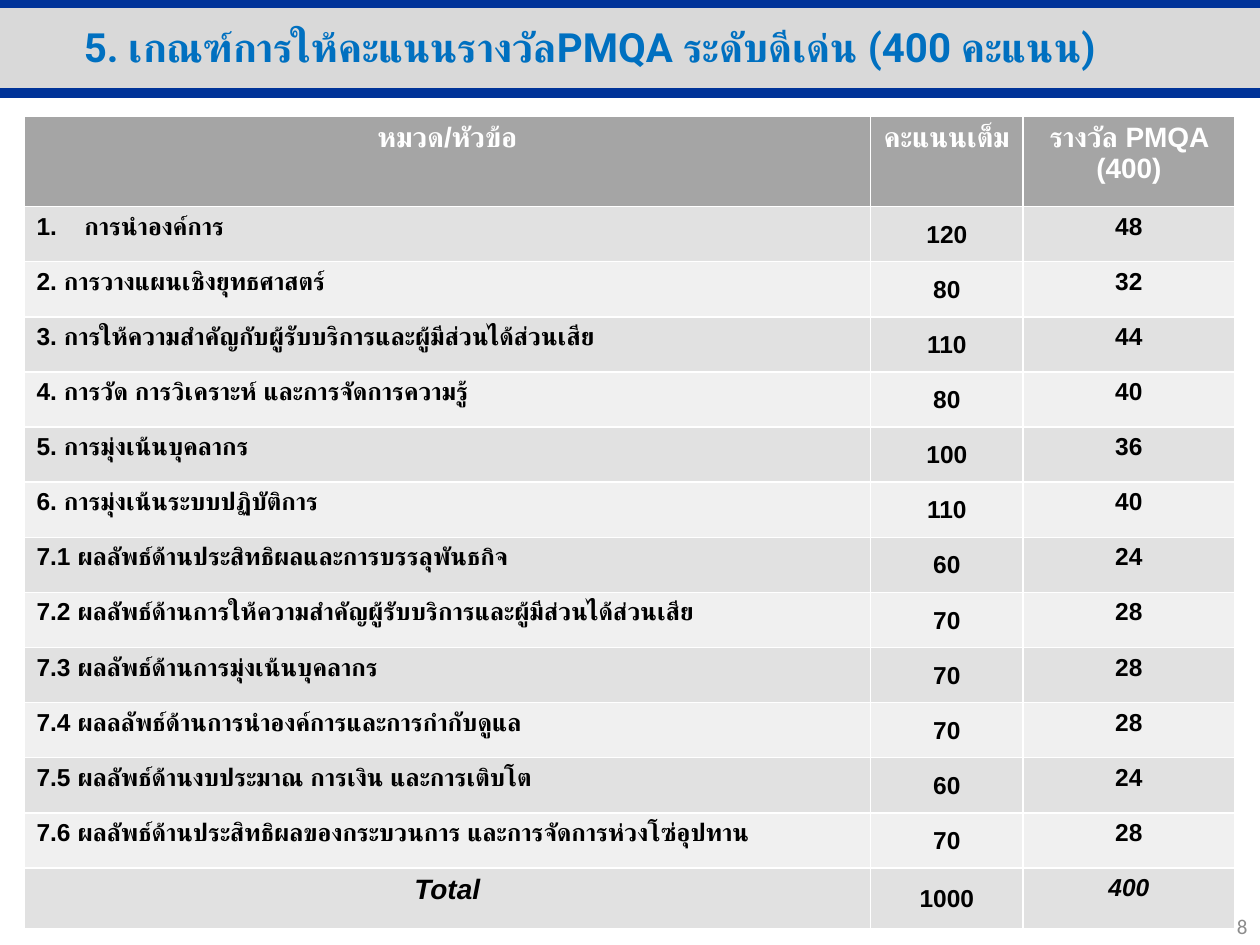
from lxml.etree import SubElement
from pptx import Presentation
from pptx.dml.color import RGBColor
from pptx.enum.shapes import MSO_CONNECTOR, MSO_SHAPE
from pptx.enum.text import MSO_ANCHOR, PP_ALIGN
from pptx.oxml.ns import qn
from pptx.util import Inches, Pt

TITLE = "5. เกณฑ์การให้คะแนนรางวัลPMQA ระดับดีเด่น (400 คะแนน)"
PAGE = "8"
HEADER = ("หมวด/หัวข้อ", "คะแนนเต็ม", "รางวัล PMQA (400)")
CRITERIA = [
    ("การนำองค์การ", 120, 48),
    ("2. การวางแผนเชิงยุทธศาสตร์", 80, 32),
    ("3. การให้ความสำคัญกับผู้รับบริการและผู้มีส่วนได้ส่วนเสีย", 110, 44),
    ("4. การวัด การวิเคราะห์ และการจัดการความรู้", 80, 40),
    ("5. การมุ่งเน้นบุคลากร", 100, 36),
    ("6. การมุ่งเน้นระบบปฏิบัติการ", 110, 40),
    ("7.1 ผลลัพธ์ด้านประสิทธิผลและการบรรลุพันธกิจ", 60, 24),
    ("7.2 ผลลัพธ์ด้านการให้ความสำคัญผู้รับบริการและผู้มีส่วนได้ส่วนเสีย", 70, 28),
    ("7.3 ผลลัพธ์ด้านการมุ่งเน้นบุคลากร", 70, 28),
    ("7.4 ผลลลัพธ์ด้านการนำองค์การและการกำกับดูแล", 70, 28),
    ("7.5 ผลลัพธ์ด้านงบประมาณ การเงิน และการเติบโต", 60, 24),
    ("7.6 ผลลัพธ์ด้านประสิทธิผลของกระบวนการ และการจัดการห่วงโซ่อุปทาน", 70, 28),
]
TOTAL = ("Total", 1000, 400)

WHITE = RGBColor(0xFF, 0xFF, 0xFF)
BLACK = RGBColor(0x00, 0x00, 0x00)
NAVY = RGBColor(0x00, 0x33, 0x99)
BLUE = RGBColor(0x00, 0x70, 0xC0)
BAND = RGBColor(0xD9, 0xD9, 0xD9)
HEAD = RGBColor(0xA5, 0xA5, 0xA5)
ODD = RGBColor(0xE1, 0xE1, 0xE1)
EVEN = RGBColor(0xF0, 0xF0, 0xF0)
GREY = RGBColor(0x8C, 0x8C, 0x8C)

COLS = (6.72, 1.21, 1.68)
TABLE_H, HEAD_H, TOTAL_H = 6.45, 0.72, 0.48
BODY_H = (TABLE_H - HEAD_H - TOTAL_H) / len(CRITERIA)


def write(tf, text, align, color, **formats):
    p = tf.paragraphs[0]
    p.alignment = align
    r = p.add_run()
    r.text = str(text)
    r.font.color.rgb = color
    for name, value in formats.items():
        setattr(r.font, name, value)
    SubElement(r.font._element, qn("a:cs"), typeface=formats["name"])
    return p


def place(shape, left, top, width, height):
    shape.left, shape.top = Inches(left), Inches(top)
    shape.width, shape.height = Inches(width), Inches(height)


def add_banner(s):
    bar = s.shapes.add_shape(MSO_SHAPE.RECTANGLE, 0, Inches(0.05), Inches(10), Inches(0.68))
    bar.shadow.inherit = False
    bar.fill.solid()
    bar.fill.fore_color.rgb = BAND
    bar.line.fill.background()
    for y in (0.74, 0.02):
        rule = s.shapes.add_connector(MSO_CONNECTOR.STRAIGHT, 0, Inches(y), Inches(10), Inches(y))
        rule.line.color.rgb = NAVY
        rule.line.width = Pt(6)
        SubElement(rule.element.spPr, qn("a:effectLst"))


def add_scores(s):
    rows = [HEADER, *CRITERIA, TOTAL]
    last = len(rows) - 1
    table = s.shapes.add_table(len(rows), len(COLS), Inches(0.19), Inches(0.92),
                               Inches(sum(COLS)), Inches(TABLE_H)).table
    for col, width in zip(table.columns, COLS):
        col.width = Inches(width)
    for i, row in enumerate(rows):
        head, total = i == 0, i == last
        table.rows[i].height = Inches(HEAD_H if head else TOTAL_H if total else BODY_H)
        for j, text in enumerate(row):
            cell = table.cell(i, j)
            cell.fill.solid()
            cell.fill.fore_color.rgb = HEAD if head else ODD if i % 2 else EVEN
            if j == 1 and not head:
                cell.vertical_anchor = MSO_ANCHOR.MIDDLE
                cell.margin_left = cell.margin_right = Inches(0.07)
                cell.margin_top, cell.margin_bottom = Inches(0.01), 0
            centred = head or total or j > 0
            p = write(cell.text_frame, text, PP_ALIGN.CENTER if centred else PP_ALIGN.LEFT,
                      WHITE if head else BLACK, name="Arial", bold=True,
                      size=Pt(16 if head or (total and j == 0) else 14),
                      italic=total and j != 1)
            if i == 1 and j == 0:
                pPr = p._p.get_or_add_pPr()
                pPr.set("marL", str(Inches(0.38)))
                pPr.set("indent", str(Inches(-0.38)))
                SubElement(pPr, qn("a:buFont"), typeface="+mj-lt")
                SubElement(pPr, qn("a:buAutoNum"), type="arabicPeriod")


def main():
    prs = Presentation()
    prs.slide_width, prs.slide_height = Inches(10), Inches(7.5)
    s = prs.slides.add_slide(prs.slide_layouts[5])
    add_banner(s)
    add_scores(s)

    page = s.shapes.add_textbox(Inches(7.75), Inches(7.15), Inches(2.25), Inches(0.4))
    page.text_frame.word_wrap = True
    page.text_frame.vertical_anchor = MSO_ANCHOR.MIDDLE
    write(page.text_frame, PAGE, PP_ALIGN.RIGHT, GREY, name="Calibri", size=Pt(12))

    title = s.shapes.title
    place(title, -0.28, 0.13, 9.92, 1.25)
    title.text_frame.vertical_anchor = MSO_ANCHOR.TOP
    write(title.text_frame, TITLE, PP_ALIGN.CENTER, BLUE, name="Roboto", size=Pt(23), bold=True)
    title.element.getparent().append(title.element)

    prs.save("out.pptx")


if __name__ == "__main__":
    main()
